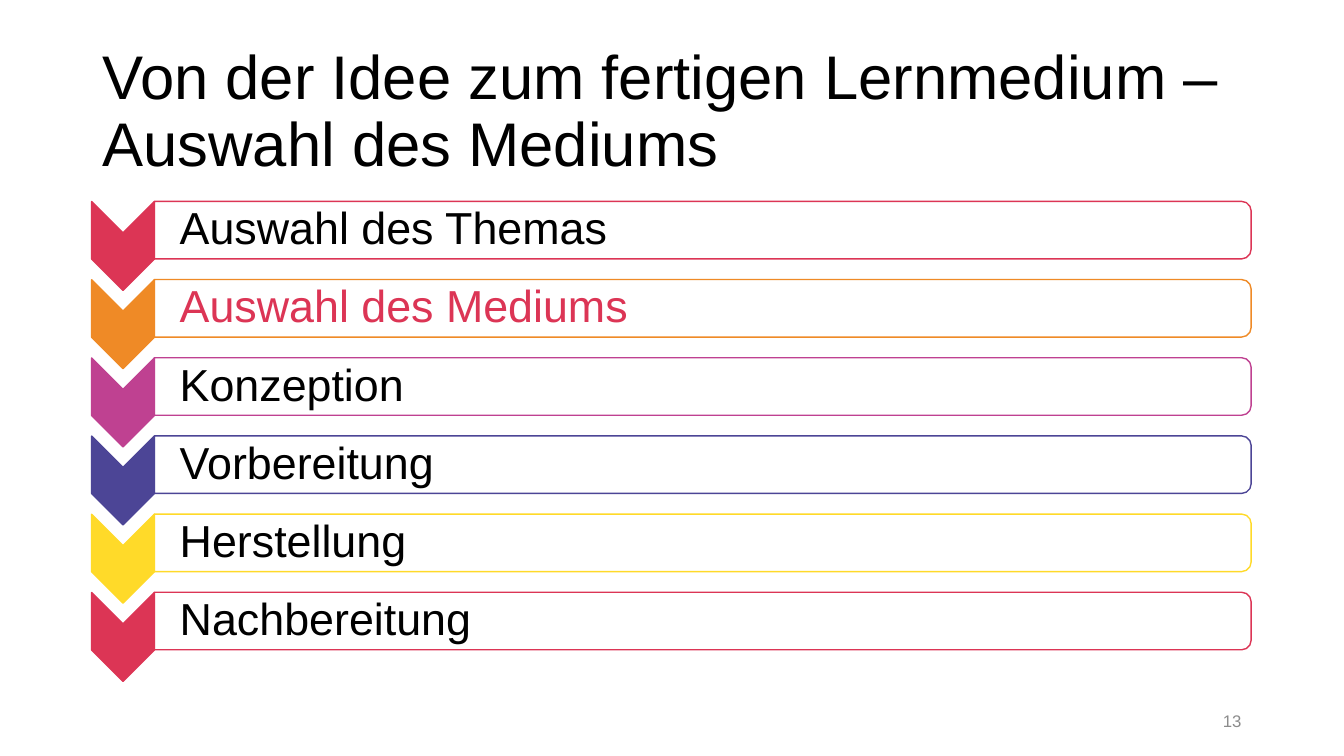
"""Build a slide listing the six steps from an idea to a finished learning medium."""
from dataclasses import dataclass

from lxml import etree
from pptx import Presentation
from pptx.dml.color import RGBColor
from pptx.enum.shapes import MSO_SHAPE as Preset
from pptx.enum.text import MSO_ANCHOR as Anchor, PP_ALIGN as Align
from pptx.oxml.ns import qn
from pptx.util import Cm, Pt

TITLE = "Von der Idee zum fertigen Lernmedium – Auswahl des Mediums"
PAGE_NUMBER = "13"
STEPS = [
    ("Auswahl des Themas", "red"),
    ("Auswahl des Mediums", "orange"),
    ("Konzeption", "magenta"),
    ("Vorbereitung", "violet"),
    ("Herstellung", "yellow"),
    ("Nachbereitung", "red"),
]
CURRENT_STEP = "Auswahl des Mediums"


@dataclass(frozen=True)
class Theme:
    """Colours, font and type sizes."""
    red: str = "DC3555"
    orange: str = "EF8A26"
    magenta: str = "BF4191"
    violet: str = "4C4596"
    yellow: str = "FFDA29"
    white: str = "FFFFFF"
    black: str = "000000"
    grey: str = "8C8C8C"
    font: str = "Arial"
    title: int = 44
    step: int = 32
    small: int = 12


THEME = Theme()
FIRST_MIDDLE, STEP_PITCH = 5.8, 1.97
CHEVRON_X, CHEVRON_DROP, CHEVRON_SIZE = 3.1, 0.4, (2.24, 1.58)
FRAME_X, FRAME_SIZE = 17.71, (1.45, 27.64)
LABEL_LEFT, LABEL_WIDTH, LABEL_HEIGHT = 3.89, 27.55, 1.32
DEFAULT_INSETS = (0.25, 0.13, 0.25, 0.13)
LABEL_INSETS = (0.64, 0.05, 0.05, 0.05)


def add_text(page, text, left, top, width, height, *, size, color=THEME.black,
             align=Align.LEFT, spacing=1.0, insets=DEFAULT_INSETS):
    """Place one vertically centred paragraph; lengths are centimetres."""
    box = page.shapes.add_textbox(Cm(left), Cm(top), Cm(width), Cm(height))
    frame = box.text_frame
    frame.word_wrap = True
    frame.vertical_anchor = Anchor.MIDDLE
    (frame.margin_left, frame.margin_top,
     frame.margin_right, frame.margin_bottom) = map(Cm, insets)
    para = frame.paragraphs[0]
    para.alignment, para.line_spacing = align, spacing
    span = para.add_run()
    span.text = text
    span.font.name, span.font.size = THEME.font, Pt(size)
    span.font.color.rgb = RGBColor.from_string(color)


def add_turned(page, preset, center_x, center_y, size, fill, line):
    """Place a preset shape turned by a quarter around its centre."""
    width, height = size
    shape = page.shapes.add_shape(
        preset, Cm(center_x - width / 2), Cm(center_y - height / 2), Cm(width), Cm(height))
    shape.rotation = 90
    shape.shadow.inherit = False
    shape.fill.solid()
    shape.fill.fore_color.rgb = RGBColor.from_string(fill)
    shape.line.color.rgb = RGBColor.from_string(line)
    shape.line.width = Pt(1)
    return shape


def add_step(page, index, label, color_name):
    """Draw one row: frame, chevron and label."""
    middle = FIRST_MIDDLE + index * STEP_PITCH
    color = getattr(THEME, color_name)
    add_turned(page, Preset.CHEVRON, CHEVRON_X, middle + CHEVRON_DROP,
               CHEVRON_SIZE, color, color)
    frame = add_turned(page, Preset.ROUND_2_SAME_RECTANGLE, FRAME_X, middle,
                       FRAME_SIZE, THEME.white, color)
    fill_color = frame._element.spPr.find(qn("a:solidFill"))[0]
    etree.SubElement(fill_color, qn("a:alpha")).set("val", "90000")
    add_text(page, label, LABEL_LEFT, middle - LABEL_HEIGHT / 2, LABEL_WIDTH, LABEL_HEIGHT,
             size=THEME.step, color=THEME.red if label == CURRENT_STEP else THEME.black,
             spacing=0.9, insets=LABEL_INSETS)


def main():
    """Build and save the deck."""
    deck = Presentation()
    deck.slide_width, deck.slide_height = Cm(33.87), Cm(19.05)
    page = deck.slides.add_slide(deck.slide_layouts[6])
    add_text(page, TITLE, 2.33, 1.01, 29.21, 3.68, size=THEME.title, spacing=0.9)
    for index, (label, color_name) in enumerate(STEPS):
        add_step(page, index, label, color_name)
    add_text(page, PAGE_NUMBER, 23.92, 17.66, 7.62, 1.01,
             size=THEME.small, color=THEME.grey, align=Align.RIGHT)
    deck.save("out.pptx")


if __name__ == "__main__":
    main()
